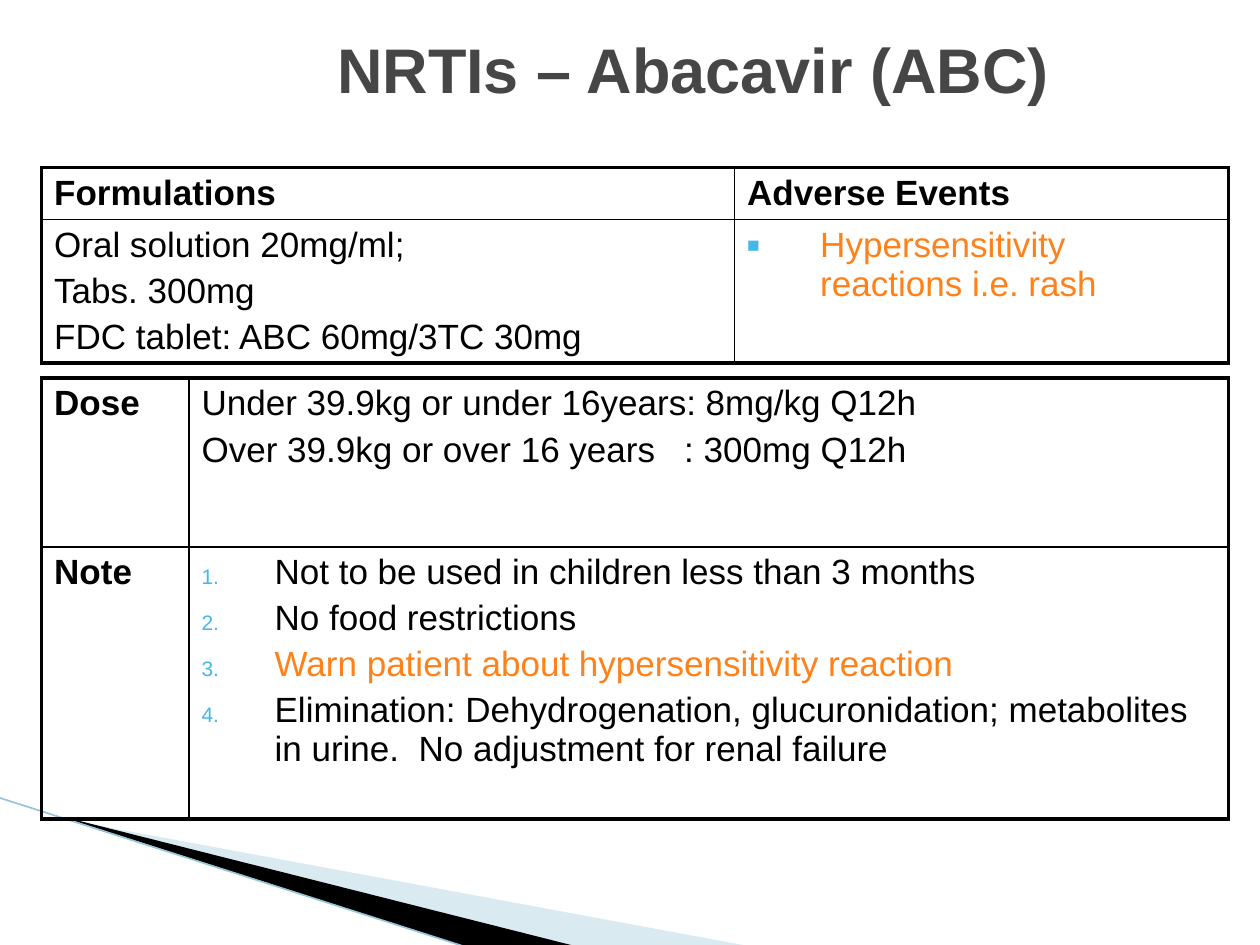
from lxml.etree import SubElement
from pptx import Presentation
from pptx.dml.color import RGBColor
from pptx.enum.text import MSO_ANCHOR, PP_ALIGN
from pptx.oxml.ns import qn
from pptx.util import Inches, Pt

THEME = {
    "font": "Arial", "title_size": Pt(36), "body_size": Pt(20),
    "space_before": Pt(4), "outer_border": Pt(2.25), "inner_border": Pt(1),
    "title": "464646", "text": "000000", "warning": "FF8119",
    "bullet": "44B9E8", "border": "000000",
    "pale": "A0CBDC", "dark": "000000", "edge": "97C5D8",
}
HANGING = Inches(0.58)


def add_color(parent, value):
    fill = SubElement(parent, qn("a:solidFill"))
    return SubElement(fill, qn("a:srgbClr"), val=value)


def write_paragraph(paragraph, text, bold=False, color="text", bullet=None):
    if bullet:
        properties = paragraph._p.get_or_add_pPr()
        properties.set("marL", str(HANGING))
        properties.set("indent", str(-HANGING))
        bullet_color = SubElement(properties, qn("a:buClr"))
        SubElement(bullet_color, qn("a:srgbClr"), val=THEME["bullet"])
        SubElement(properties, qn("a:buSzPct"), val="60000")
        SubElement(properties, qn("a:buFont"), typeface=THEME["font"])
        if bullet == "number":
            SubElement(properties, qn("a:buAutoNum"), type="arabicPeriod")
        else:
            SubElement(properties, qn("a:buChar"), char=bullet)
    run = paragraph.add_run()
    run.text = text
    font_format = {"name": THEME["font"], "size": THEME["body_size"], "bold": bold}
    for name, value in font_format.items():
        setattr(run.font, name, value)
    run.font.color.rgb = RGBColor.from_string(THEME[color])
    return run


presentation = Presentation()
presentation.slide_width, presentation.slide_height = Inches(10), Inches(7.5)
slide = presentation.slides.add_slide(presentation.slide_layouts[5])

# Corner wedges: fill, opacity in percent, corner points
wedges = [
    ("pale", 40, [(0.55, 6.51), (5.95, 7.51), (4.56, 7.51), (0.55, 6.5)]),
    ("dark", 100, [(0.53, 6.49), (4.57, 7.51), (3.72, 7.52), (0.54, 6.5)]),
]
for color, opacity, corners in wedges:
    points = [(Inches(x), Inches(y)) for x, y in corners]
    builder = slide.shapes.build_freeform(*points[0])
    builder.add_line_segments(points[1:], close=True)
    wedge = builder.convert_to_shape()
    wedge.shadow.inherit = False
    wedge.line.fill.background()
    wedge.fill.solid()
    wedge.fill.fore_color.rgb = RGBColor.from_string(THEME[color])
    color_element = wedge._element.spPr.find(qn("a:solidFill"))[0]
    SubElement(color_element, qn("a:alpha"), val=str(opacity * 1000))

# Thin edge along the wedges
edge = slide.shapes.add_connector(
    1, Inches(-0.01), Inches(6.33), Inches(3.71), Inches(7.52))
edge.line.width = Pt(0.95)
edge.line.color.rgb = RGBColor.from_string(THEME["edge"])
SubElement(edge._element.spPr, qn("a:effectLst"))

# Title, in front of the wedges
title = slide.shapes.title
slide.shapes._spTree.append(title._element)
title_box = {"left": Inches(1), "top": Inches(0.08),
             "width": Inches(9), "height": Inches(0.92)}
for name, value in title_box.items():
    setattr(title, name, value)
title.text_frame.vertical_anchor = MSO_ANCHOR.MIDDLE
title_paragraph = title.text_frame.paragraphs[0]
title_paragraph.alignment = PP_ALIGN.CENTER
title_run = write_paragraph(title_paragraph, "NRTIs – Abacavir (ABC)", True, "title")
title_run.font.size = THEME["title_size"]

# Tables: each cell is a list of paragraphs given as text and format
heading = {"bold": True}
numbered = {"bullet": "number"}
tables = [
    {"top": 1.33, "columns": [5.5, 3.92], "rows": [0.41, 1.14], "cells": [
        [[("Formulations", heading)], [("Adverse Events", heading)]],
        [[("Oral solution 20mg/ml;", {}),
          ("Tabs. 300mg", {}),
          ("FDC tablet: ABC 60mg/3TC 30mg", {})],
         [("Hypersensitivity reactions i.e. rash",
           {"bullet": "■", "color": "warning"})]],
    ]},
    {"top": 3, "columns": [1.17, 8.25], "rows": [1.34, 2.16], "cells": [
        [[("Dose", heading)],
         [("Under 39.9kg or under 16years: 8mg/kg Q12h", {}),
          ("Over 39.9kg or over 16 years   : 300mg Q12h", {})]],
        [[("Note", heading)],
         [("Not to be used in children less than 3 months", numbered),
          ("No food restrictions", numbered),
          ("Warn patient about hypersensitivity reaction",
           {**numbered, "color": "warning"}),
          ("Elimination: Dehydrogenation, glucuronidation; metabolites "
           "in urine.  No adjustment for renal failure", numbered)]],
    ]},
]
for content in tables:
    widths, heights = content["columns"], content["rows"]
    table = slide.shapes.add_table(
        len(heights), len(widths), Inches(0.33), Inches(content["top"]),
        Inches(sum(widths)), Inches(sum(heights))).table
    table.first_row = table.horz_banding = False
    for column, width in zip(table.columns, widths):
        column.width = Inches(width)
    for row, height in zip(table.rows, heights):
        row.height = Inches(height)

    for row_index, row_cells in enumerate(content["cells"]):
        for column_index, paragraphs in enumerate(row_cells):
            cell = table.cell(row_index, column_index)
            for index, (text, text_format) in enumerate(paragraphs):
                frame = cell.text_frame
                paragraph = frame.add_paragraph() if index else frame.paragraphs[0]
                write_paragraph(paragraph, text, **text_format)
                if index:
                    paragraph.space_before = THEME["space_before"]

            # Heavy frame outside, thin rules inside
            outer_sides = {
                "a:lnL": column_index == 0,
                "a:lnR": column_index == len(widths) - 1,
                "a:lnT": row_index == 0,
                "a:lnB": row_index == len(heights) - 1,
            }
            cell_properties = cell._tc.get_or_add_tcPr()
            for side, is_outer in outer_sides.items():
                weight = THEME["outer_border" if is_outer else "inner_border"]
                border = SubElement(cell_properties, qn(side), w=str(weight))
                add_color(border, THEME["border"])
            cell.fill.background()

presentation.save("out.pptx")
